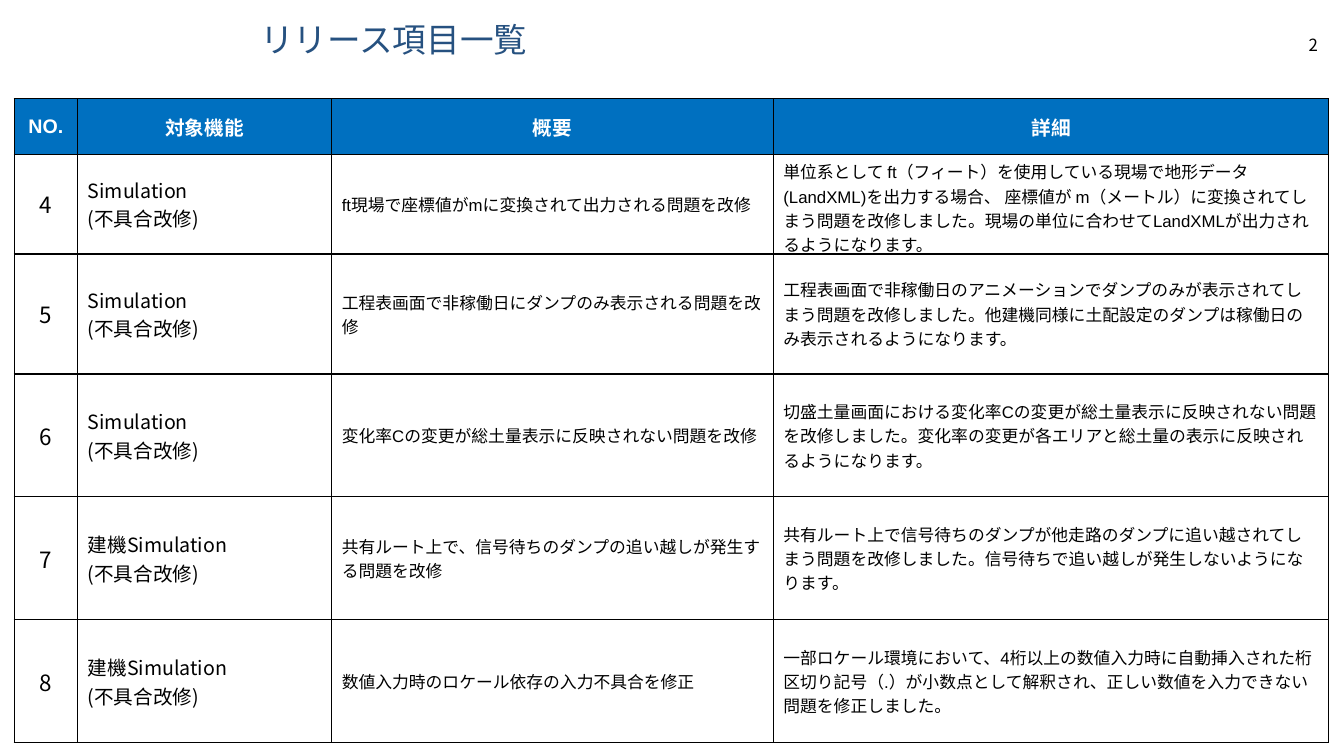
"""Build the release item list slide: a title, a page number and a table."""
from lxml.etree import SubElement
from pptx import Presentation
from pptx.dml.color import RGBColor
from pptx.enum.text import MSO_ANCHOR as Anchor, MSO_AUTO_SIZE as AutoSize, PP_ALIGN as Align
from pptx.oxml.ns import qn
from pptx.util import Inches, Pt

COLORS = {"title": "265180", "header": "0070C0", "white": "FFFFFF", "black": "000000"}
LATIN, JAPANESE = "Arial", "Noto Sans CJK JP"
COLUMN_WIDTHS = [0.63, 2.52, 4.38, 5.51]
ROW_HEIGHTS = [0.55, 0.99, 1.19, 1.22, 1.22, 1.22]
HEADERS = ["NO.", "対象機能", "概要", "詳細"]
FIX = "(不具合改修)"
ITEMS = [
    ["4", "Simulation", "ft現場で座標値がmに変換されて出力される問題を改修",
     "単位系として ft（フィート）を使用している現場で地形データ(LandXML)を出力する場合、 "
     "座標値が m（メートル）に変換されてしまう問題を改修しました。"
     "現場の単位に合わせてLandXMLが出力されるようになります。"],
    ["5", "Simulation", "工程表画面で非稼働日にダンプのみ表示される問題を改修",
     "工程表画面で非稼働日のアニメーションでダンプのみが表示されてしまう問題を改修しました。"
     "他建機同様に土配設定のダンプは稼働日のみ表示されるようになります。"],
    ["6", "Simulation", "変化率Cの変更が総土量表示に反映されない問題を改修",
     "切盛土量画面における変化率Cの変更が総土量表示に反映されない問題を改修しました。"
     "変化率の変更が各エリアと総土量の表示に反映されるようになります。"],
    ["7", "建機Simulation", "共有ルート上で、信号待ちのダンプの追い越しが発生する問題を改修",
     "共有ルート上で信号待ちのダンプが他走路のダンプに追い越されてしまう問題を改修しました。"
     "信号待ちで追い越しが発生しないようになります。"],
    ["8", "建機Simulation", "数値入力時のロケール依存の入力不具合を修正",
     "一部ロケール環境において、4桁以上の数値入力時に自動挿入された桁区切り記号（.）が"
     "小数点として解釈され、正しい数値を入力できない問題を修正しました。"],
]
BODY_STYLES = [(16, JAPANESE, Align.CENTER), (14, JAPANESE, Align.LEFT),
               (12, LATIN, Align.LEFT), (12, LATIN, Align.LEFT)]


def write(paragraph, text, size, font_name, color, align, bold=False):
    """Add one formatted run to a paragraph."""
    paragraph.alignment = align
    run = paragraph.add_run()
    run.text = text
    run.font.size = Pt(size)
    run.font.bold = bold
    run.font.color.rgb = RGBColor.from_string(COLORS[color])
    run.font.name = font_name
    SubElement(run.font._element, qn("a:ea"), typeface=JAPANESE)


def format_cell(cell, fill):
    """Give a cell thin black borders, a plain fill and middle anchoring."""
    properties = cell._tc.get_or_add_tcPr()
    for side in ("a:lnL", "a:lnR", "a:lnT", "a:lnB"):
        line = SubElement(properties, qn(side), w=str(Pt(1)))
        line_fill = SubElement(line, qn("a:solidFill"))
        SubElement(line_fill, qn("a:srgbClr"), val=COLORS["black"])
    cell.fill.solid()
    cell.fill.fore_color.rgb = RGBColor.from_string(COLORS[fill])
    cell.vertical_anchor = Anchor.MIDDLE


presentation = Presentation()
presentation.slide_width, presentation.slide_height = Inches(13.33), Inches(7.5)
slide = presentation.slides.add_slide(presentation.slide_layouts[5])

title = slide.shapes.title
title.left, title.top, title.width, title.height = map(Inches, (2.48, 0.2, 8.92, 0.42))
title.text_frame.auto_size = AutoSize.NONE
title.text_frame.vertical_anchor = Anchor.MIDDLE
title_paragraph = title.text_frame.paragraphs[0]
title_paragraph.line_spacing = 0.9
write(title_paragraph, "リリース項目一覧", 24, LATIN, "title", Align.LEFT)

page_number = slide.shapes.add_textbox(*map(Inches, (12.48, 0.3, 0.69, 0.3)))
page_number.text_frame.word_wrap = True
write(page_number.text_frame.paragraphs[0], "2", 12, JAPANESE, "black", Align.RIGHT)

table = slide.shapes.add_table(
    len(ROW_HEIGHTS), len(COLUMN_WIDTHS), Inches(0.14), Inches(0.98),
    Inches(sum(COLUMN_WIDTHS)), Inches(sum(ROW_HEIGHTS))).table
table.horz_banding = False
for column, width in zip(table.columns, COLUMN_WIDTHS):
    column.width = Inches(width)
for row, height in zip(table.rows, ROW_HEIGHTS):
    row.height = Inches(height)

for cell, header in zip(table.rows[0].cells, HEADERS):
    format_cell(cell, "header")
    write(cell.text_frame.paragraphs[0], header, 14, LATIN, "white", Align.CENTER, bold=True)

for row_index, item in enumerate(ITEMS, start=1):
    for column_index, (text, style) in enumerate(zip(item, BODY_STYLES)):
        size, font_name, align = style
        cell = table.cell(row_index, column_index)
        format_cell(cell, "white")
        write(cell.text_frame.paragraphs[0], text, size, font_name, "black", align)
        if column_index == 1:
            write(cell.text_frame.add_paragraph(), FIX, size, font_name, "black", align)

presentation.save("out.pptx")
